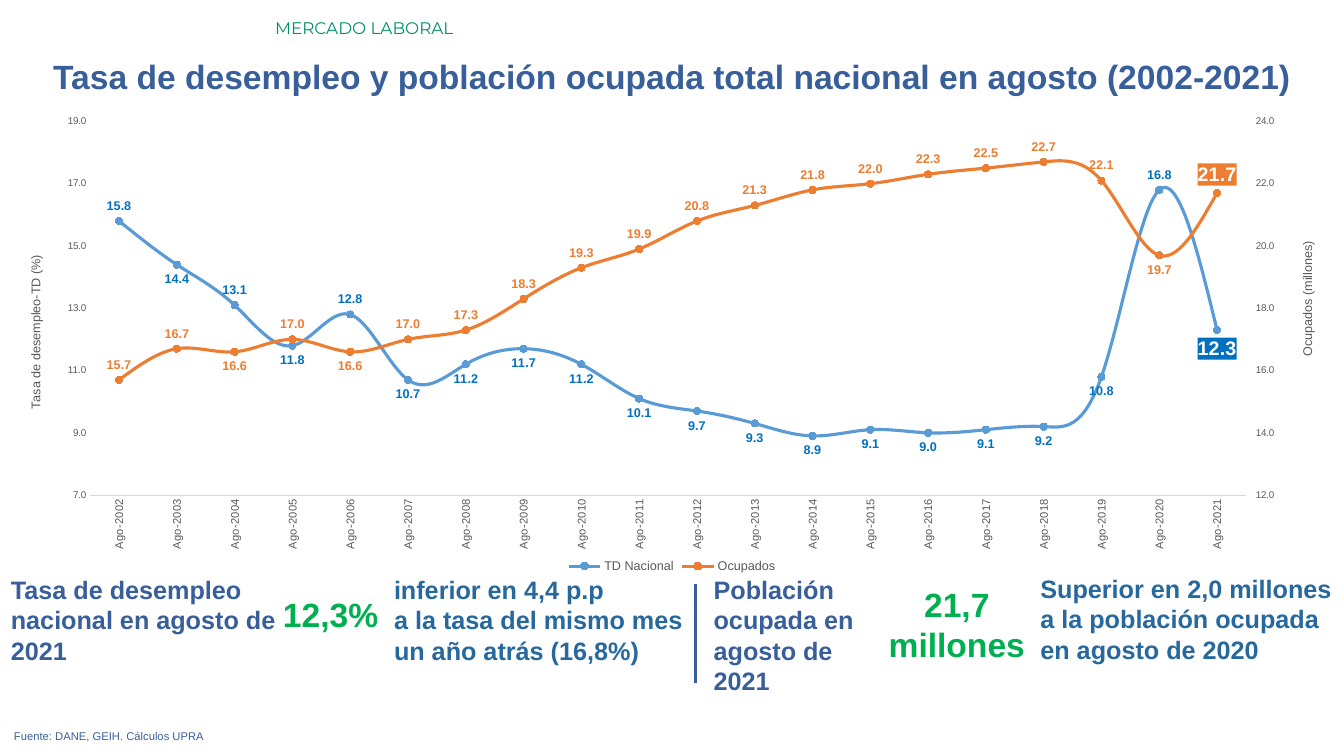
from copy import deepcopy

from lxml import etree
from pptx import Presentation
from pptx.chart.axis import ValueAxis
from pptx.chart.data import CategoryChartData
from pptx.dml.color import RGBColor
from pptx.enum.chart import XL_CHART_TYPE as CT, XL_LABEL_POSITION as LP
from pptx.enum.chart import XL_LEGEND_POSITION, XL_MARKER_STYLE as MS, XL_TICK_MARK as TM
from pptx.enum.shapes import MSO_CONNECTOR
from pptx.enum.text import MSO_ANCHOR, MSO_AUTO_SIZE, PP_ALIGN
from pptx.oxml import parse_xml
from pptx.oxml.ns import nsdecls, qn
from pptx.util import Inches, Pt

COLORS = {"green": "009267", "navy": "395F9B", "steel": "27689D", "figure": "00B050",
          "gray": "595959", "axis": "D9D9D9", "white": "FFFFFF",
          "td": "5B9BD5", "td_label": "0070C0", "ocupados": "ED7D31"}
YEARS = range(2002, 2022)
TD = [15.8, 14.4, 13.1, 11.8, 12.8, 10.7, 11.2, 11.7, 11.2, 10.1,
      9.7, 9.3, 8.9, 9.1, 9, 9.1, 9.2, 10.8, 16.8, 12.3]
OCUPADOS = [15.7, 16.7, 16.6, 17, 16.6, 17, 17.3, 18.3, 19.3, 19.9,
            20.8, 21.3, 21.8, 22, 22.3, 22.5, 22.7, 22.1, 19.7, 21.7]


def rgb(name):
    return RGBColor.from_string(COLORS[name])


def set_font(font, size, color, bold=False, name="Arial"):
    font.name, font.size, font.bold = name, Pt(size), bold
    font.color.rgb = rgb(color)


def fill_text(sp, text, size, color, bold=True, align=PP_ALIGN.LEFT, name="Arial"):
    tf = sp.text_frame
    tf.text = text
    tf.word_wrap = True
    tf.auto_size = MSO_AUTO_SIZE.SHAPE_TO_FIT_TEXT
    tf.vertical_anchor = MSO_ANCHOR.TOP
    for p in tf.paragraphs:
        p.alignment = align
        for r in p.runs:
            set_font(r.font, size, color, bold, name)


def add_text(s, box, *args, **kwargs):
    fill_text(s.shapes.add_textbox(*map(Inches, box)), *args, **kwargs)


def add_header(s, box):
    x, y, w, h = box
    add_text(s, (x + 2.63, y, w - 2.63, 0.3), "MERCADO LABORAL", 12, "green",
             bold=False, name="Montserrat")
    title = s.shapes.title
    title.left, title.top, title.width, title.height = map(Inches, (x, y + 0.37, w, 0.5))
    fill_text(title, "Tasa de desempleo y población ocupada total nacional en agosto (2002-2021)",
              24, "navy", align=PP_ALIGN.CENTER)


def manual_layout(x, y, w=None, h=None):
    inner = '<c:layoutTarget val="inner"/>' if w else ""
    size = f'<c:w val="{w}"/><c:h val="{h}"/>' if w else ""
    return parse_xml(
        f'<c:layout {nsdecls("c")}><c:manualLayout>{inner}<c:xMode val="edge"/>'
        f'<c:yMode val="edge"/><c:x val="{x}"/><c:y val="{y}"/>{size}</c:manualLayout></c:layout>')


def style_value_axis(axis, title, low, high, spot):
    axis.minimum_scale, axis.maximum_scale, axis.major_unit = low, high, 2
    axis.has_major_gridlines = False
    axis.major_tick_mark = axis.minor_tick_mark = TM.NONE
    axis.format.line.fill.background()
    axis.tick_labels.number_format = "0.0"
    axis.tick_labels.number_format_is_linked = False
    set_font(axis.tick_labels.font, 7, "gray")
    tf = axis.axis_title.text_frame
    tf.text = title
    set_font(tf.paragraphs[0].runs[0].font, 9, "gray")
    element = axis.axis_title._element
    body = element.find(".//" + qn("a:bodyPr"))
    body.set("rot", "-5400000")
    body.set("vert", "horz")
    for old in element.findall(qn("c:layout")):
        element.remove(old)
    element.find(qn("c:tx")).addnext(manual_layout(*spot))


def style_series(series, line, label, position, flipped, flipped_position):
    series.smooth = True
    series.format.line.color.rgb = rgb(line)
    series.format.line.width = Pt(2.25)
    series.marker.style, series.marker.size = MS.CIRCLE, 5
    series.marker.format.fill.solid()
    series.marker.format.fill.fore_color.rgb = rgb(line)
    series.marker.format.line.color.rgb = rgb(line)
    labels = series.data_labels
    labels.show_value = True
    labels.number_format, labels.number_format_is_linked = "#,##0.0", False
    labels.position = position
    set_font(labels.font, 9, label, True)
    last = len(YEARS) - 1
    for i in (*flipped, last):
        point_label = series.points[i].data_label
        point_label.position = position if i == last else flipped_position
        set_font(point_label.font, *((14, "white") if i == last else (9, label)), True)
    highlight = series._element.xpath(f"c:dLbls/c:dLbl[c:idx/@val='{last}']/c:txPr")[0]
    highlight.addprevious(parse_xml(
        f'<c:spPr {nsdecls("c", "a")}><a:solidFill><a:srgbClr val="{COLORS[label]}"/>'
        '</a:solidFill></c:spPr>'))


def add_right_axis(chart, series):
    area = chart._chartSpace.chart.plotArea
    left_plot, cat, val = (area.find(qn(f"c:{tag}")) for tag in ("lineChart", "catAx", "valAx"))
    right_plot, right_cat, right_val = map(deepcopy, (left_plot, cat, val))
    for ser in right_plot.findall(qn("c:ser")):
        right_plot.remove(ser)
    left_plot.addnext(right_plot)
    right_plot.find(qn("c:varyColors")).addnext(series._element)
    val.addnext(right_val)
    right_val.addnext(right_cat)
    cat_id, val_id = "50010", "50020"
    for ax, own, other in ((right_cat, cat_id, val_id), (right_val, val_id, cat_id)):
        ax.find(qn("c:axId")).set("val", own)
        ax.find(qn("c:crossAx")).set("val", other)
    for ref, number in zip(right_plot.findall(qn("c:axId")), (cat_id, val_id)):
        ref.set("val", number)
    right_cat.find(qn("c:delete")).set("val", "1")
    right_val.find(qn("c:axPos")).set("val", "r")
    right_val.find(qn("c:crosses")).set("val", "max")
    return ValueAxis(right_val)


def add_rate_chart(s, box):
    data = CategoryChartData(number_format="0.0")
    data.categories = [f"Ago-{year}" for year in YEARS]
    data.add_series("TD Nacional", TD)
    data.add_series("Ocupados", OCUPADOS)
    chart = s.shapes.add_chart(CT.LINE_MARKERS, *map(Inches, box), data).chart
    set_font(chart.font, 10, "gray")
    chart.has_title = False
    chart.has_legend = True
    chart.legend.position = XL_LEGEND_POSITION.BOTTOM
    chart.legend.include_in_layout = False
    set_font(chart.legend.font, 9, "gray")
    chart.plots[0].vary_by_categories = False
    td, ocupados = chart.plots[0].series
    style_series(td, "td", "td_label", LP.BELOW, (0, 2, 4, 18), LP.ABOVE)
    style_series(ocupados, "ocupados", "ocupados", LP.ABOVE, (2, 4, 18), LP.BELOW)

    left = chart.value_axis
    right = add_right_axis(chart, ocupados)
    style_value_axis(left, "Tasa de desempleo-TD (%)", 7, 19, (0.003, 0.31))
    style_value_axis(right, "Ocupados (millones)", 12, 24, (0.98, 0.28))
    right.major_tick_mark = TM.OUTSIDE
    cat = chart.category_axis
    cat.major_tick_mark = cat.minor_tick_mark = TM.NONE
    cat.format.line.color.rgb = rgb("axis")
    cat.format.line.width = Pt(0.75)
    set_font(cat.tick_labels.font, 8, "gray")
    cat._element.find(qn("c:txPr")).find(qn("a:bodyPr")).set("rot", "-5400000")
    area = chart._chartSpace.chart.plotArea
    for old in area.findall(qn("c:layout")):
        area.remove(old)
    area.insert(0, manual_layout(0.053, 0.031, 0.888, 0.794))


def add_findings(s, box):
    x, y, w, h = box
    add_text(s, (x, y, 2.84, 1.01), "Tasa de desempleo nacional en agosto de 2021", 18, "navy")
    add_text(s, (x + 2.62, y + 0.19, 1.22, 0.5), "12,3%", 24, "figure", align=PP_ALIGN.RIGHT)
    add_text(s, (x + 3.8, y, 3.07, 1.01),
             "inferior en 4,4 p.p\na la tasa del mismo mes un año atrás (16,8%)", 18, "steel")
    divider = s.shapes.add_connector(
        MSO_CONNECTOR.STRAIGHT, *map(Inches, (x + 6.89, y + 0.14, x + 6.89, y + 1.13)))
    divider.line.color.rgb = rgb("navy")
    divider.line.width = Pt(2.25)
    etree.SubElement(divider._element.spPr, qn("a:effectLst"))
    add_text(s, (x + 6.97, y, 1.83, h), "Población ocupada en agosto de 2021", 18, "navy")
    add_text(s, (x + 8.68, y + 0.09, 1.6, 0.91), "21,7 millones", 24, "figure",
             align=PP_ALIGN.CENTER)
    add_text(s, (x + 10.21, y - 0.01, w - 10.21, 1.01),
             "Superior en 2,0 millones a la población ocupada en agosto de 2020", 18, "steel")


def main():
    prs = Presentation()
    prs.slide_width, prs.slide_height = Inches(13.33), Inches(7.5)
    s = prs.slides.add_slide(prs.slide_layouts[5])
    add_header(s, (0, 0.13, 13.33, 0.87))
    add_findings(s, (0.01, 5.65, 13.43, 1.31))
    add_text(s, (0.04, 7.19, 12.91, 0.24), "Fuente: DANE, GEIH. Cálculos UPRA", 8, "navy",
             bold=False, align=PP_ALIGN.JUSTIFY)
    add_rate_chart(s, (0.21, 1.06, 12.91, 4.67))
    prs.save("out.pptx")


if __name__ == "__main__":
    main()
